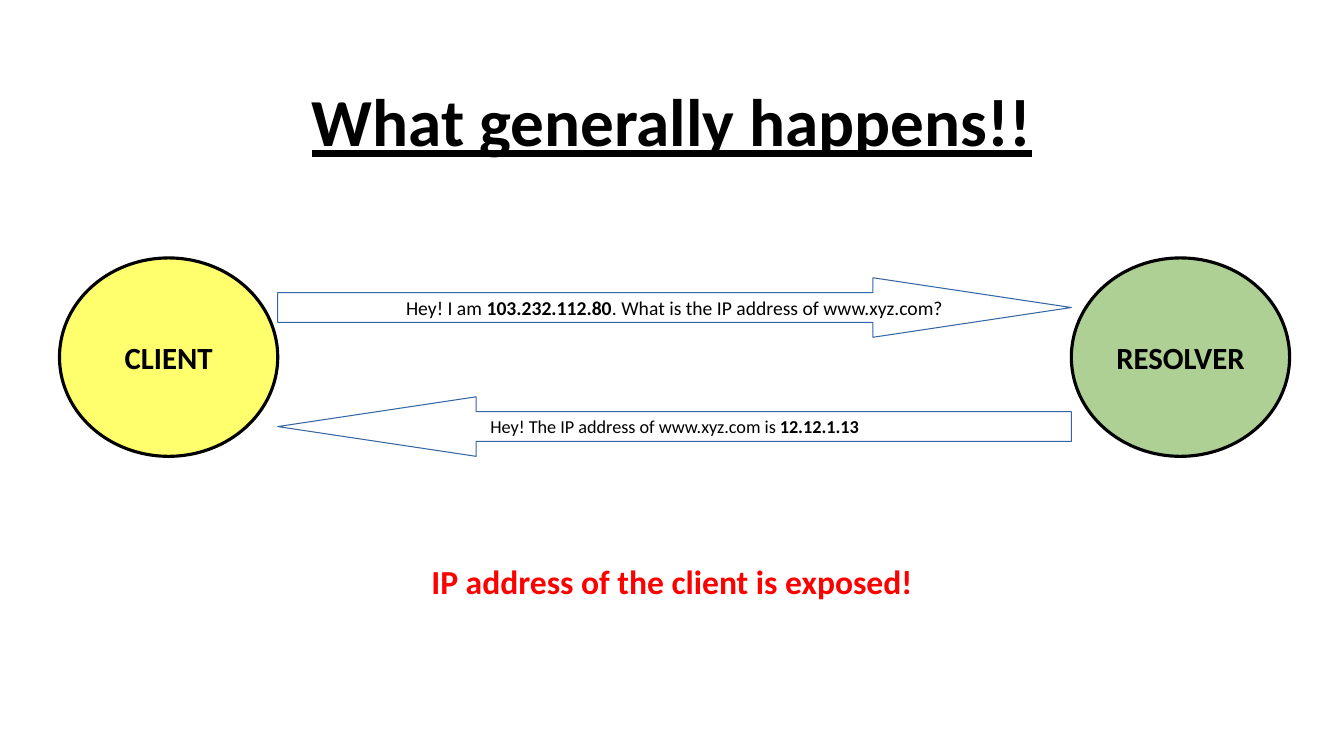
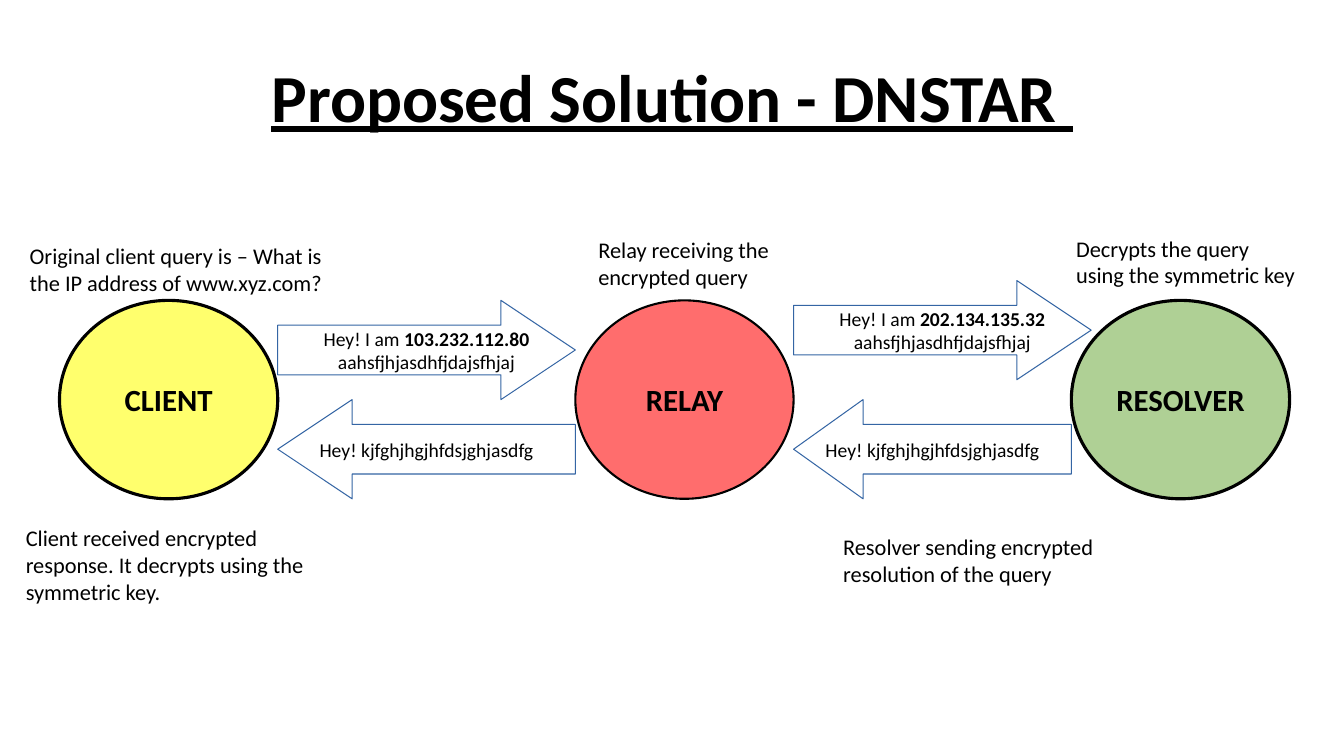
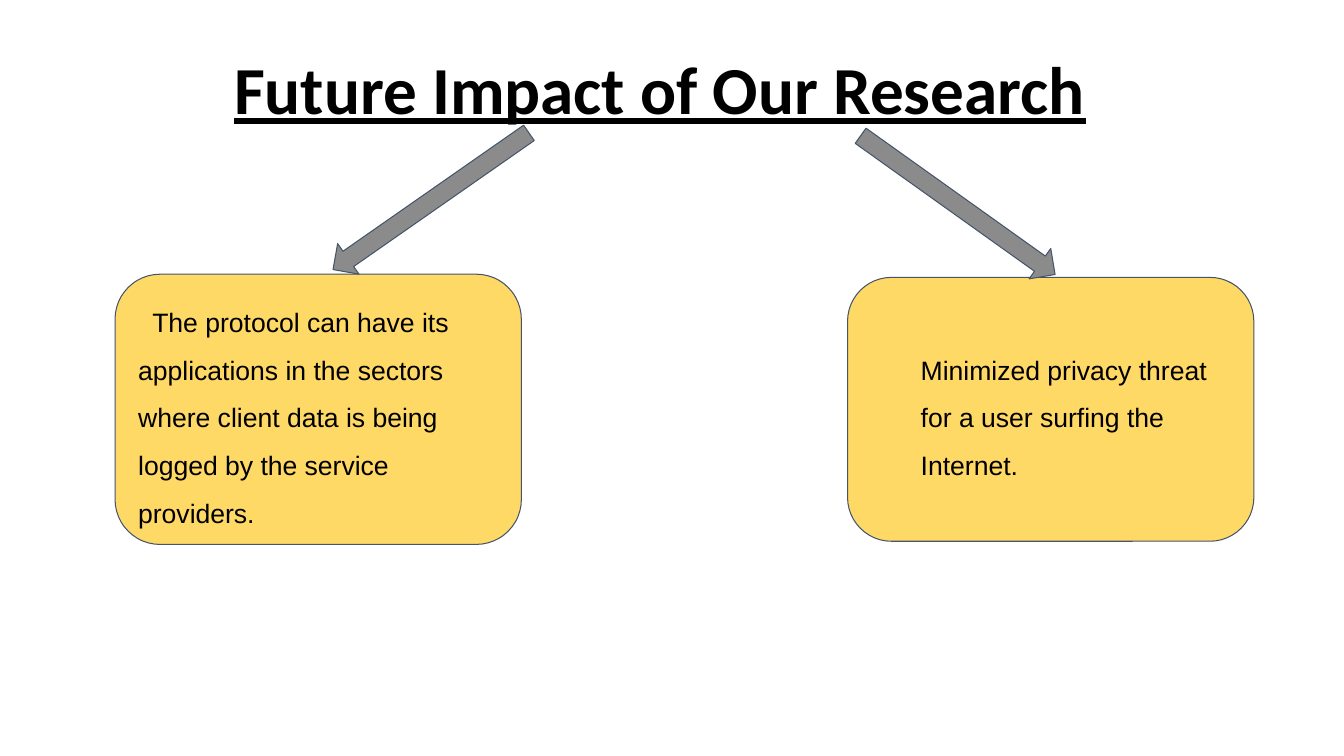
"""Build three slides on private name resolution, laid out on a one-centimetre grid."""

from dataclasses import dataclass

from pptx import Presentation
from pptx.dml.color import RGBColor
from pptx.enum.shapes import MSO_SHAPE as Preset
from pptx.enum.text import MSO_ANCHOR as Anchor, PP_ALIGN as Align
from pptx.util import Cm, Inches, Length, Pt

BLACK = RGBColor(0x00, 0x00, 0x00)
WHITE = RGBColor(0xFF, 0xFF, 0xFF)
RED = RGBColor(0xFF, 0x00, 0x00)
YELLOW = RGBColor(0xFF, 0xFF, 0x6D)
GREEN = RGBColor(0xAF, 0xD0, 0x95)
CORAL = RGBColor(0xFF, 0x6D, 0x6D)
GOLD = RGBColor(0xFF, 0xD9, 0x66)
GREY = RGBColor(0x8B, 0x8B, 0x8B)
BLUE = RGBColor(0x34, 0x65, 0xA4)
SLATE = RGBColor(0x44, 0x54, 0x6A)

COLUMNS, ROWS = 33.87, 19.05
NODE_WIDTH, NODE_HEIGHT = 5.5, 5
CLIENT_COLUMN, RELAY_COLUMN, RESOLVER_COLUMN = 1.5, 14.5, 27
CLIENT_EDGE = CLIENT_COLUMN + NODE_WIDTH
RELAY_EDGE = RELAY_COLUMN + NODE_WIDTH
DIRECT_ROW, RELAYED_ROW = 6.5, 7.57
ARROW_OUTLINE = ((0, 0.25), (0.75, 0.25), (0.75, 0), (1, 0.5),
                 (0.75, 1), (0.75, 0.75), (0, 0.75))


@dataclass(frozen=True)
class Area:
    """A rectangle in grid columns and rows."""

    column: float
    row: float
    width: float
    height: float

    def lengths(self) -> tuple[Length, Length, Length, Length]:
        """Return left, top, width and height."""
        return Cm(self.column), Cm(self.row), Cm(self.width), Cm(self.height)


@dataclass(frozen=True)
class Style:
    """The look of a text."""

    size: float
    color: RGBColor = BLACK
    bold: bool = False
    underline: bool = False
    font: str = "Calibri"
    align: Align = Align.CENTER


@dataclass(frozen=True)
class Node:
    """A party in the exchange."""

    name: str
    column: float
    fill: RGBColor
    line_width: float = 2.25


@dataclass(frozen=True)
class Message:
    """A block arrow whose every second span is bold."""

    area: Area
    spans: tuple[str, ...]
    leftward: bool = False
    size: float = 14


@dataclass(frozen=True)
class Caption:
    """A remark beside the exchange."""

    area: Area
    text: str


@dataclass(frozen=True)
class Impact:
    """A card with the arrow that leads to it."""

    card: Area
    text: str
    margin: Length
    indent: Length
    arrow: Area
    rotation: float


TITLE = Style(48, bold=True, underline=True)
ALERT = Style(24, color=RED, bold=True)
NODE = Style(22, bold=True)
CAPTION = Style(16, align=Align.LEFT)
CARD = Style(19, font="Arial", align=Align.LEFT)

CLIENT = Node("CLIENT", CLIENT_COLUMN, YELLOW)
RELAY = Node("RELAY", RELAY_COLUMN, CORAL, 1.5)
RESOLVER = Node("RESOLVER", RESOLVER_COLUMN, GREEN)

DIRECT_MESSAGES = (
    Message(Area(CLIENT_EDGE, 7, 20, 1.5),
            ("Hey! I am ", "103.232.112.80", ". What is the IP address of www.xyz.com?")),
    Message(Area(CLIENT_EDGE, 10, 20, 1.5),
            ("Hey! The IP address of www.xyz.com is ", "12.12.1.13"), True, 13),
)
CIPHER_QUERY = " aahsfjhjasdhfjdajsfhjaj"
CIPHER_REPLY = ("Hey! kjfghjhgjhfdsjghjasdfg",)
REPLY_ROW = RELAYED_ROW + NODE_HEIGHT / 2
RELAYED_MESSAGES = (
    Message(Area(CLIENT_EDGE, RELAYED_ROW, 7.5, 2.5),
            ("Hey! I am ", "103.232.112.80", CIPHER_QUERY)),
    Message(Area(RELAY_EDGE, RELAYED_ROW - 0.5, 7.5, 2.5),
            ("Hey! I am ", "202.134.135.32", CIPHER_QUERY)),
    Message(Area(RELAY_EDGE, REPLY_ROW, 7, 2.5), CIPHER_REPLY, True),
    Message(Area(CLIENT_EDGE, REPLY_ROW, 7.5, 2.5), CIPHER_REPLY, True),
)
CAPTIONS = (
    Caption(Area(0.5, 5.97, 8, 1.78),
            "Original client query is – What is the IP address of www.xyz.com?"),
    Caption(Area(14.83, 5.82, 5.1, 1.78), "Relay receiving the encrypted query"),
    Caption(Area(21, 13.31, 7, 1.27), "Resolver sending encrypted resolution of the query"),
    Caption(Area(0.4, 13.08, 8.3, 2.5),
            "Client received encrypted response. It decrypts using the symmetric key."),
    Caption(Area(26.87, 5.79, 6.12, 1.3), "Decrypts the query using the symmetric key"),
)
IMPACTS = (
    Impact(Area(21.36, 6.99, 10.24, 6.65),
           "Minimized privacy threat for a user surfing the Internet.",
           Inches(0.5), Inches(0), Area(21.13, 4.7, 6.02, 0.94), 35.5),
    Impact(Area(2.9, 6.91, 10.24, 6.81),
           "The protocol can have its applications in the sectors where client data "
           "is being logged by the service providers.",
           Inches(0), Inches(0.14), Area(7.85, 4.6, 6.02, 0.94), 145.1),
)


def format_run(run, style: Style, bold: bool) -> None:
    """Apply a style to one run."""
    font = run.font
    font.name, font.size, font.bold = style.font, Pt(style.size), bold
    font.underline = style.underline
    font.color.rgb = style.color


def write(frame, style: Style, *spans: str):
    """Write one paragraph; every second span is bold."""
    frame.word_wrap = True
    para = frame.paragraphs[0]
    para.alignment = style.align
    for index, span in enumerate(spans):
        run = para.add_run()
        run.text = span
        format_run(run, style, style.bold or index % 2 == 1)
    return para


def paint(shape, fill: RGBColor, line: RGBColor, line_width: float = 0.75) -> None:
    """Give a shape a flat fill and an outline."""
    shape.shadow.inherit = False
    shape.fill.solid()
    shape.fill.fore_color.rgb = fill
    shape.line.color.rgb = line
    shape.line.width = Pt(line_width)
    shape.text_frame.vertical_anchor = Anchor.MIDDLE


def add_text(page, area: Area, style: Style, text: str) -> None:
    """Add a text box."""
    box = page.shapes.add_textbox(*area.lengths())
    write(box.text_frame, style, text)


def add_page(deck, title: str, row: float, column: float = 0, width: float = COLUMNS):
    """Add a blank page with an underlined title."""
    page = deck.slides.add_slide(deck.slide_layouts[6])
    add_text(page, Area(column, row, width, 2.4), TITLE, title)
    return page


def add_node(page, node: Node, row: float) -> None:
    """Add a party as a labelled ellipse."""
    area = Area(node.column, row, NODE_WIDTH, NODE_HEIGHT)
    ellipse = page.shapes.add_shape(Preset.OVAL, *area.lengths())
    paint(ellipse, node.fill, BLACK, node.line_width)
    write(ellipse.text_frame, NODE, node.name)


def add_message(page, message: Message) -> None:
    """Add a block arrow whose text spans its whole length."""
    left, top, width, height = message.area.lengths()
    points = [(round(left + width * (1 - x if message.leftward else x)),
               round(top + height * y)) for x, y in ARROW_OUTLINE]
    builder = page.shapes.build_freeform(*points[0])
    builder.add_line_segments(points[1:], close=True)
    arrow = builder.convert_to_shape()
    paint(arrow, WHITE, BLUE)
    write(arrow.text_frame, Style(message.size), *message.spans)


def add_exchange(page, row: float, nodes: tuple[Node, ...],
                 messages: tuple[Message, ...]) -> None:
    """Add the parties and the messages between them."""
    for node in nodes:
        add_node(page, node, row)
    for message in messages:
        add_message(page, message)


def add_impact(page, impact: Impact) -> None:
    """Add a rounded card and the arrow pointing at it."""
    card = page.shapes.add_shape(Preset.ROUNDED_RECTANGLE, *impact.card.lengths())
    paint(card, GOLD, SLATE)
    frame = card.text_frame
    frame.margin_top = frame.margin_bottom = Inches(0.1)
    para = write(frame, CARD, impact.text)
    para.line_spacing = 1.5
    properties = para._p.get_or_add_pPr()
    properties.set("marL", str(int(impact.margin)))
    properties.set("indent", str(int(impact.indent)))
    arrow = page.shapes.add_shape(Preset.RIGHT_ARROW, *impact.arrow.lengths())
    paint(arrow, GREY, SLATE)
    arrow.rotation = impact.rotation


def main() -> None:
    """Build and save the deck."""
    deck = Presentation()
    deck.slide_width, deck.slide_height = Cm(COLUMNS), Cm(ROWS)

    page = add_page(deck, "What generally happens!!", 1.88)
    add_exchange(page, DIRECT_ROW, (CLIENT, RESOLVER), DIRECT_MESSAGES)
    add_text(page, Area(0, 14, COLUMNS, 2.5), ALERT, "IP address of the client is exposed!")

    page = add_page(deck, "Proposed Solution - DNSTAR ", 1.27)
    add_exchange(page, RELAYED_ROW, (CLIENT, RESOLVER, RELAY), RELAYED_MESSAGES)
    for caption in CAPTIONS:
        add_text(page, caption.area, CAPTION, caption.text)

    page = add_page(deck, "Future Impact of Our Research", 1.07, 1.63, 30)
    for impact in IMPACTS:
        add_impact(page, impact)

    deck.save("out.pptx")


if __name__ == "__main__":
    main()
